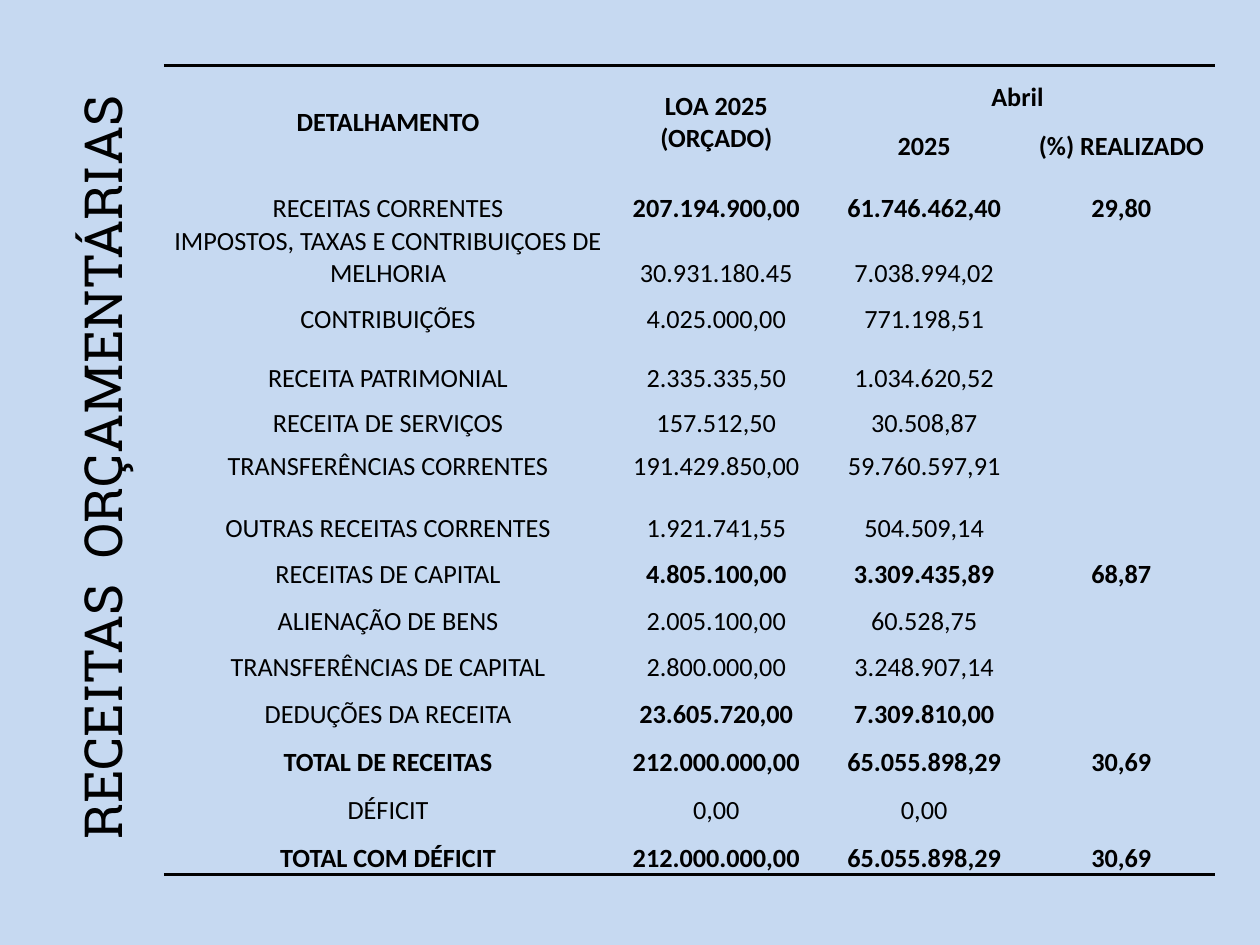
from lxml import etree
from pptx import Presentation
from pptx.dml.color import RGBColor
from pptx.enum.text import MSO_ANCHOR as Anchor, MSO_AUTO_SIZE as AutoSize, PP_ALIGN as Align
from pptx.oxml.ns import qn
from pptx.util import Inches, Pt

COLORS = {"background": "C6D9F1", "ink": "000000"}
TITLE_FONT = {"name": "Roboto Slab", "size": Pt(30), "bold": False}
CELL_FONT = {"name": "Calibri", "size": Pt(15)}
CELL_FORMAT = {"margin_left": Inches(0.01), "margin_right": Inches(0.01),
               "margin_top": Inches(0.01), "margin_bottom": 0}
PLAIN_TABLE_STYLE = "{2D5ABB26-0587-4C30-8999-92F81FD0307C}"

COLUMN_WIDTHS = [3.56, 1.65, 1.65, 1.48]
ROW_HEIGHTS = [0.38, 0.52, 0.36, 0.4, 0.36, 0.47, 0.36, 0.34,
               0.49, 0.37, 0.37, 0.37, 0.37, 0.38, 0.38, 0.38]
HEADER_ROWS = [
    ("DETALHAMENTO", "LOA 2025 (ORÇADO)", "Abril", ""),
    ("", "", "2025", "(%) REALIZADO"),
]
# Each row: level, label, budget, April amount, percent achieved
REVENUE_ROWS = [
    ("group", "RECEITAS CORRENTES", "207.194.900,00", "61.746.462,40", "29,80"),
    ("item", "IMPOSTOS, TAXAS E CONTRIBUIÇOES DE MELHORIA", "30.931.180.45", "7.038.994,02", ""),
    ("item", "CONTRIBUIÇÕES", "4.025.000,00", "771.198,51", ""),
    ("item", "RECEITA PATRIMONIAL", "2.335.335,50", "1.034.620,52", ""),
    ("item", "RECEITA DE SERVIÇOS", "157.512,50", "30.508,87", ""),
    ("item", "TRANSFERÊNCIAS CORRENTES", "191.429.850,00", "59.760.597,91", ""),
    ("item", "OUTRAS RECEITAS CORRENTES", "1.921.741,55", "504.509,14", ""),
    ("group", "RECEITAS DE CAPITAL", "4.805.100,00", "3.309.435,89", "68,87"),
    ("item", "ALIENAÇÃO DE BENS", "2.005.100,00", "60.528,75", ""),
    ("item", "TRANSFERÊNCIAS DE CAPITAL", "2.800.000,00", "3.248.907,14", ""),
    ("group", "DEDUÇÕES DA RECEITA", "23.605.720,00", "7.309.810,00", ""),
    ("total", "TOTAL DE RECEITAS", "212.000.000,00", "65.055.898,29", "30,69"),
    ("item", "DÉFICIT", "0,00", "0,00", ""),
    ("total", "TOTAL COM DÉFICIT", "212.000.000,00", "65.055.898,29", "30,69"),
]
# First row, first column, last row, last column
MERGES = [(0, 0, 1, 0), (0, 1, 1, 1), (0, 2, 0, 3), (3, 3, 8, 3), (10, 3, 12, 3)]


def rgb(name):
    return RGBColor.from_string(COLORS[name])


def apply_format(target, values):
    for name, value in values.items():
        setattr(target, name, value)


def write_text(paragraph, text, font):
    paragraph.alignment = Align.CENTER
    run = paragraph.add_run()
    run.text = text
    apply_format(run.font, font)
    run.font.color.rgb = rgb("ink")


def add_vertical_title(slide, text):
    """Use a text box, since title placeholders may ignore vertical text."""
    title = slide.shapes.add_textbox(Inches(0.51), Inches(0.52), Inches(1.01), Inches(6.38))
    frame = title.text_frame
    apply_format(frame, {"word_wrap": True, "vertical_anchor": Anchor.TOP,
                         "auto_size": AutoSize.SHAPE_TO_FIT_TEXT})
    frame._txBody.bodyPr.set("vert", "vert270")
    write_text(frame.paragraphs[0], text, TITLE_FONT)


def add_border(cell, tag):
    """Add a 2 pt line to one side; borders come before the fill."""
    line = etree.Element(qn(tag), w=str(Pt(2)))
    fill = etree.SubElement(line, qn("a:solidFill"))
    etree.SubElement(fill, qn("a:srgbClr"), val=COLORS["ink"])
    cell._tc.get_or_add_tcPr().insert(0, line)


def fill_cell(cell, text, bold, anchor):
    apply_format(cell, {**CELL_FORMAT, "vertical_anchor": anchor})
    cell.fill.solid()
    cell.fill.fore_color.rgb = rgb("background")
    if text:
        write_text(cell.text_frame.paragraphs[0], text, {**CELL_FONT, "bold": bold})


def add_revenue_table(slide):
    frame = slide.shapes.add_table(
        len(ROW_HEIGHTS), len(COLUMN_WIDTHS), Inches(1.3), Inches(0.52),
        Inches(sum(COLUMN_WIDTHS)), Inches(sum(ROW_HEIGHTS)))
    table = frame.table
    apply_format(table, {"first_row": False, "horz_banding": False})
    table._tbl.tblPr.find(qn("a:tableStyleId")).text = PLAIN_TABLE_STYLE
    for column, width in zip(table.columns, COLUMN_WIDTHS):
        column.width = Inches(width)
    for row, height in zip(table.rows, ROW_HEIGHTS):
        row.height = Inches(height)

    # Header
    for row, texts in enumerate(HEADER_ROWS):
        for column, text in enumerate(texts):
            anchor = Anchor.BOTTOM if text == "Abril" else Anchor.MIDDLE
            fill_cell(table.cell(row, column), text, True, anchor)

    # Revenue lines: groups have bold amounts, totals are bold throughout
    for row, (level, *texts) in enumerate(REVENUE_ROWS, start=len(HEADER_ROWS)):
        for column, text in enumerate(texts):
            bold = level == "total" or (level == "group" and column > 0)
            fill_cell(table.cell(row, column), text, bold, Anchor.BOTTOM)

    # Outer rules and merged cells
    for column in range(len(COLUMN_WIDTHS)):
        add_border(table.cell(0, column), "a:lnT")
        add_border(table.cell(len(ROW_HEIGHTS) - 1, column), "a:lnB")
    for top, left, bottom, right in MERGES:
        table.cell(top, left).merge(table.cell(bottom, right))


def main():
    presentation = Presentation()
    presentation.slide_width = Inches(10)
    presentation.slide_height = Inches(7.5)
    slide = presentation.slides.add_slide(presentation.slide_layouts[6])
    slide.background.fill.solid()
    slide.background.fill.fore_color.rgb = rgb("background")
    add_vertical_title(slide, "RECEITAS  ORÇAMENTÁRIAS")
    add_revenue_table(slide)
    presentation.save("out.pptx")


if __name__ == "__main__":
    main()
